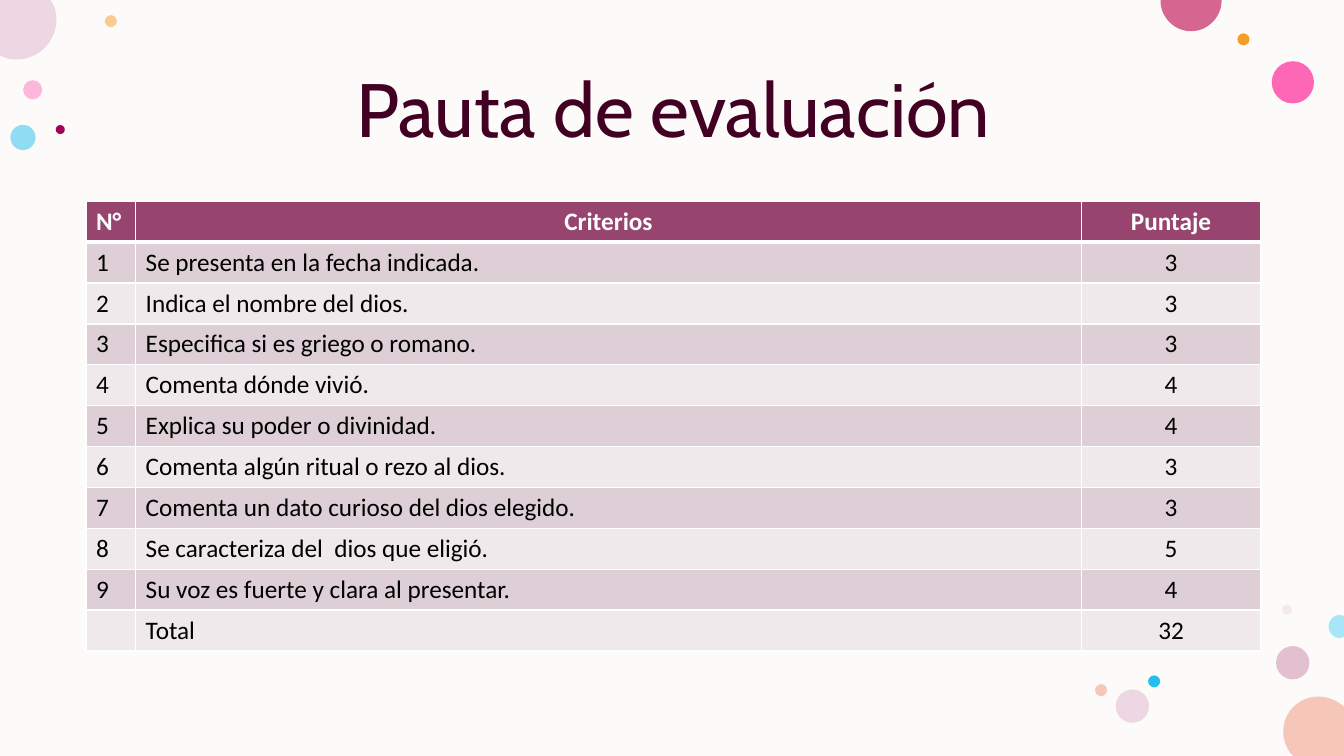
from lxml.etree import SubElement
from pptx import Presentation
from pptx.dml.color import RGBColor
from pptx.enum.shapes import MSO_SHAPE as SHAPE
from pptx.enum.text import MSO_ANCHOR as ANCHOR, PP_ALIGN as ALIGN
from pptx.oxml import parse_xml
from pptx.oxml.ns import nsdecls, qn
from pptx.util import Pt

WIDTH, HEIGHT = 960, 540

CREAM = RGBColor(0xFD, 0xFB, 0xF9)
WHITE = RGBColor(0xFF, 0xFF, 0xFF)
BLACK = RGBColor(0x00, 0x00, 0x00)
PLUM = RGBColor(0x42, 0x00, 0x23)
HEADER = RGBColor(0x97, 0x44, 0x6E)
BAND_DARK = RGBColor(0xDD, 0xCF, 0xD5)
BAND_LIGHT = RGBColor(0xEF, 0xE9, 0xEB)
PINK = RGBColor(0xFF, 0x75, 0xBD)
HOT_PINK = RGBColor(0xFF, 0x2F, 0x9C)
ORANGE = RGBColor(0xF3, 0x9E, 0x29)
MAUVE = RGBColor(0xC9, 0x87, 0xA8)
BLUE = RGBColor(0x24, 0xBE, 0xEE)
PALE_BLUE = RGBColor(0xA7, 0xE5, 0xF8)
ROSE = RGBColor(0xE3, 0xBE, 0xBE)
LILAC = RGBColor(0xED, 0xD7, 0xE2)
PEACH = RGBColor(0xF6, 0xC7, 0xB9)
RASPBERRY = RGBColor(0xD6, 0x65, 0x8F)
MAGENTA = RGBColor(0xA4, 0x00, 0x56)

# left, top, diameter, colour, opacity in percent
BUBBLES = [
    (16.5, 57.3, 13.7, PINK, 50),
    (74.9, 10.8, 8.6, ORANGE, 50),
    (911.5, 461.5, 23.8, MAUVE, 50),
    (7.4, 89.2, 18, BLUE, 50),
    (908.4, 43.7, 30.2, HOT_PINK, 72),
    (883.9, 23.8, 8.6, ORANGE, 100),
    (915.8, 432, 7.2, ROSE, 28),
    (820.1, 482.4, 8.6, BLUE, 100),
    (797, 492.5, 23.8, LILAC, 100),
    (782.2, 488.7, 8.6, PEACH, 100),
    (39.8, 89.3, 6.5, MAGENTA, 100),
]

# Circles cut by the slide edge: colour, start, then segments;
# one point is a line, three points are a Bézier curve
CUT_BUBBLES = [
    (PEACH, (941.8, 497.5), [
        [(949, 497.5), (954.7, 500.4), (960, 504.7)],
        [(960, 540)], [(924, 540)], [(922.3, 538.6)],
        [(918.7, 534.2), (916.6, 528.5), (916.6, 522.7)],
        [(916.6, 508.3), (928.1, 497.5), (941.8, 497.5)]]),
    (LILAC, (0, 0), [
        [(36, 0)], [(38.2, 3.6)],
        [(39.6, 6.5), (40.3, 10.1), (40.3, 14.4)],
        [(40.3, 29.5), (27.4, 42.5), (12.2, 42.5)],
        [(7.9, 42.5), (4.3, 41.8), (1.4, 40.3)],
        [(0, 39.6)]]),
    (RASPBERRY, (829, 0), [
        [(872.6, 0)], [(872.6, 0.7)],
        [(872.6, 12.2), (862.6, 22.3), (850.8, 22.3)],
        [(838.8, 22.3), (829, 12.2), (829, 0.7)]]),
    (PALE_BLUE, (956.9, 439.2), [
        [(960, 439.9)], [(960, 455)], [(956.9, 455.8)],
        [(952.6, 455.8), (949, 452.2), (949, 447.5)],
        [(949, 442.8), (952.6, 439.2), (956.9, 439.2)]]),
]

HEADINGS = ("N°", "Criterios", "Puntaje")
CRITERIA = [
    ("Se presenta en la fecha indicada.", 3),
    ("Indica el nombre del dios.", 3),
    ("Especifica si es griego o romano.", 3),
    ("Comenta dónde vivió.", 4),
    ("Explica su poder o divinidad.", 4),
    ("Comenta algún ritual o rezo al dios.", 3),
    ("Comenta un dato curioso del dios elegido.", 3),
    ("Se caracteriza del  dios que eligió.", 5),
    ("Su voz es fuerte y clara al presentar.", 4),
]
COLUMN_WIDTHS = (35.5, 675.5, 128.2)
ROW_HEIGHT = 29.2


class SlideBuilder:
    title_font, body_font = "Cabin", "Calibri"
    title_size, body_size = 54, 18

    def __init__(self, slide):
        self.s = slide

    def paint(self, sp, color):
        sp.shadow.inherit = False
        sp.line.fill.background()
        sp.fill.solid()
        sp.fill.fore_color.rgb = color

    def shape(self, kind, left, top, width, height, color, opacity=100):
        sp = self.s.shapes.add_shape(
            kind, Pt(left), Pt(top), Pt(width), Pt(height))
        self.paint(sp, color)
        if opacity < 100:
            clr = sp._element.spPr.find(qn("a:solidFill"))[0]
            SubElement(clr, qn("a:alpha"), val=str(opacity * 1000))

    def curved(self, color, start, segments):
        """Draw a closed outline of lines and Bézier curves."""
        points = [(Pt(x), Pt(y)) for segment in segments for x, y in segment]
        outline = self.s.shapes.build_freeform(Pt(start[0]), Pt(start[1]))
        outline.add_line_segments(points, close=True)
        sp = outline.convert_to_shape()
        self.paint(sp, color)
        lines = iter(list(sp._element.iter(qn("a:lnTo"))))
        for segment in segments:
            first, *others = [next(lines) for _ in segment]
            if others:
                first.tag = qn("a:cubicBezTo")
                for line in others:
                    first.append(line[0])
                    line.getparent().remove(line)

    def run(self, p, text, font, size, color, bold=False):
        r = p.add_run()
        r.text = text
        r.font.name, r.font.size, r.font.bold = font, Pt(size), bold
        r.font.color.rgb = color

    def title(self, text, left, top, width, height):
        tf = self.s.shapes.add_textbox(
            Pt(left), Pt(top), Pt(width), Pt(height)).text_frame
        tf.word_wrap = True
        tf.vertical_anchor = ANCHOR.MIDDLE
        p = tf.paragraphs[0]
        p.alignment, p.line_spacing = ALIGN.CENTER, 0.9
        self.run(p, text, self.title_font, self.title_size, PLUM)

    def borders(self, cell, top, bottom):
        tc_pr = cell._tc.get_or_add_tcPr()
        widths = {"lnL": 1, "lnR": 1, "lnT": top, "lnB": bottom}
        for i, (side, width) in enumerate(widths.items()):
            tc_pr.insert(i, parse_xml(
                f'<a:{side} {nsdecls("a")} w="{Pt(width)}"><a:solidFill>'
                f'<a:srgbClr val="{WHITE}"/></a:solidFill></a:{side}>'))

    def table(self, rows, left, top):
        tbl = self.s.shapes.add_table(
            len(rows), len(COLUMN_WIDTHS), Pt(left), Pt(top),
            Pt(sum(COLUMN_WIDTHS)), Pt(ROW_HEIGHT * len(rows))).table
        for column, width in zip(tbl.columns, COLUMN_WIDTHS):
            column.width = Pt(width)
        for i, values in enumerate(rows):
            tbl.rows[i].height = Pt(ROW_HEIGHT)
            head = i == 0
            color = HEADER if head else BAND_DARK if i % 2 else BAND_LIGHT
            for j, text in enumerate(values):
                cell = tbl.cell(i, j)
                cell.fill.solid()
                cell.fill.fore_color.rgb = color
                self.borders(cell, 3 if i == 1 else 1, 3 if head else 1)
                p = cell.text_frame.paragraphs[0]
                centred = j == 2 or (head and j == 1)
                p.alignment = ALIGN.CENTER if centred else ALIGN.LEFT
                if text:
                    self.run(p, text, self.body_font, self.body_size,
                             WHITE if head else BLACK, head)


def main():
    prs = Presentation()
    prs.slide_width, prs.slide_height = Pt(WIDTH), Pt(HEIGHT)
    page = SlideBuilder(prs.slides.add_slide(prs.slide_layouts[6]))
    page.shape(SHAPE.RECTANGLE, 0, 0, WIDTH, HEIGHT, CREAM)
    for left, top, size, color, opacity in BUBBLES:
        page.shape(SHAPE.OVAL, left, top, size, size, color, opacity)
    for cut_bubble in CUT_BUBBLES:
        page.curved(*cut_bubble)
    page.title("Pauta de evaluación", 61.2, 28.8, 839.5, 104.4)
    rows = [HEADINGS]
    rows += [(str(n), text, str(points))
             for n, (text, points) in enumerate(CRITERIA, 1)]
    rows.append(("", "Total", str(sum(points for _, points in CRITERIA))))
    page.table(rows, 61.4, 143.8)
    prs.save("out.pptx")


if __name__ == "__main__":
    main()
